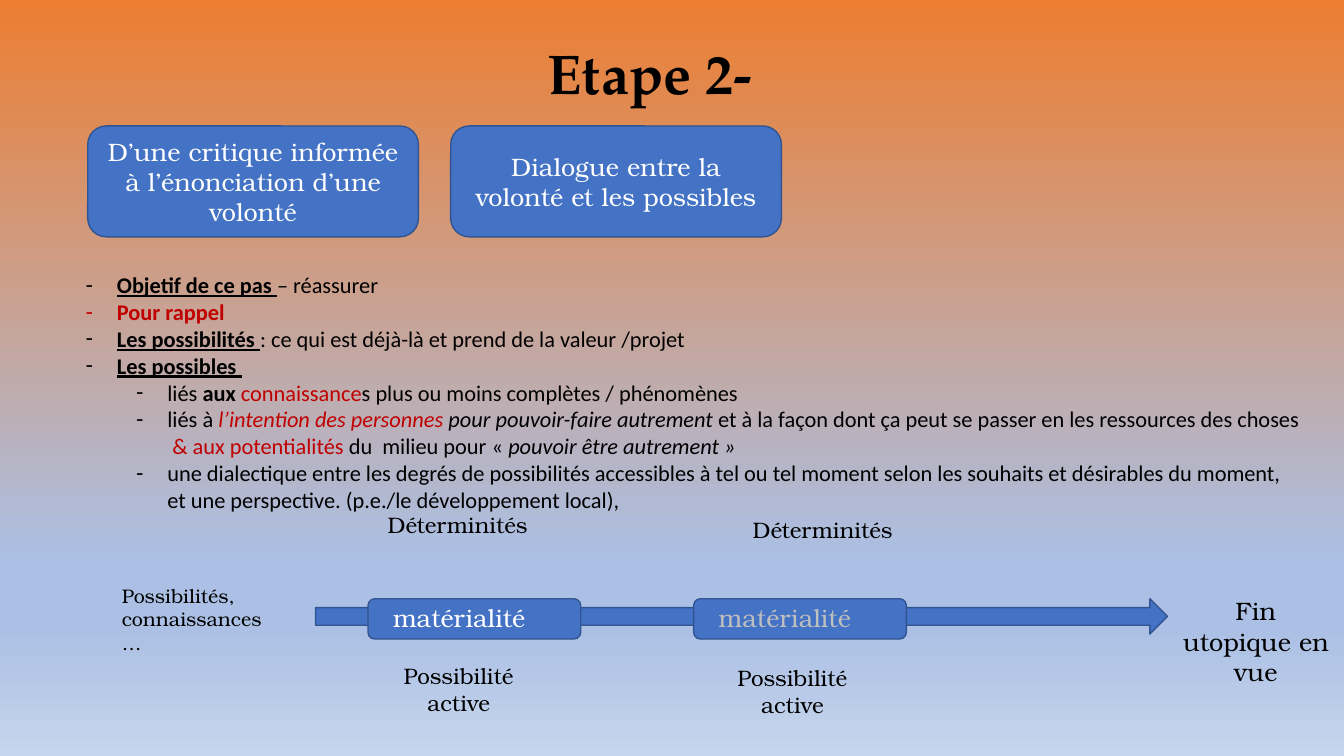
from pptx import Presentation
from pptx.dml.color import RGBColor
from pptx.enum.shapes import MSO_SHAPE as SHAPE
from pptx.enum.text import MSO_ANCHOR as ANCHOR, MSO_AUTO_SIZE as AUTO, PP_ALIGN as ALIGN
from pptx.oxml.ns import qn
from pptx.util import Inches, Pt
from lxml.etree import SubElement

rgb = RGBColor.from_string
BLACK, WHITE, GREY, RED, BLUE, EDGE = "000000", "FFFFFF", "BFBFBF", "C00000", "4472C4", "325491"
SERIF = "TeX Gyre Bonum"


def write(tf, text, size, color=BLACK, align=ALIGN.CENTER, font=SERIF, bold=False):
    tf.word_wrap = True
    p = tf.paragraphs[0]
    p.alignment = align
    r = p.add_run()
    r.text = text
    for name, value in dict(name=font, size=Pt(size), bold=bold).items():
        setattr(r.font, name, value)
    r.font.color.rgb = rgb(color)


def add_block(kind, *box):
    sp = s.shapes.add_shape(kind, *map(Inches, box))
    sp.shadow.inherit = False
    sp.fill.solid()
    sp.fill.fore_color.rgb = rgb(BLUE)
    sp.line.color.rgb = rgb(EDGE)
    sp.line.width = Pt(1)
    return sp


prs = Presentation()
prs.slide_width, prs.slide_height = Inches(13.33), Inches(7.5)
s = prs.slides.add_slide(prs.slide_layouts[1])

# Background: orange fading down to pale blue
fill = s.background.fill
fill.gradient()
fill.gradient_angle = 270
stops = s.element.find(".//" + qn("a:gsLst"))
for stop in list(stops):
    stops.remove(stop)
for pos, color in [(0, "ED7D31"), (3, "EA8038"), (74, "ABC0E4"), (83, "ABC0E4"), (100, "C7D5ED")]:
    stop = SubElement(stops, qn("a:gs"), pos=str(pos * 1000))
    SubElement(stop, qn("a:srgbClr"), val=color)

# Title and body placeholders
title, body = s.shapes.title, s.placeholders[1]
for sp, box in [(title, (0.32, 0.33, 12.25, 0.77)), (body, (0.75, 2.64, 12.25, 2.79))]:
    sp.left, sp.top, sp.width, sp.height = map(Inches, box)
    sp.text_frame.auto_size = AUTO.NONE
title.text_frame.vertical_anchor = ANCHOR.MIDDLE
write(title.text_frame, "Etape 2-", 40, font="TeX Gyre Pagella", bold=True)

# The two steps
for x, text in [(0.87, "D’une critique informée à l’énonciation d’une volonté"),
                (4.47, "Dialogue entre la volonté et les possibles")]:
    tf = add_block(SHAPE.ROUNDED_RECTANGLE, x, 1.25, 3.28, 1.1).text_frame
    tf.vertical_anchor = ANCHOR.MIDDLE
    write(tf, text, 18, WHITE)

# Dashed list: (level, runs), each run a text and its format
PLAIN, BOLD, ITALIC = {}, dict(bold=True), dict(italic=True)
HEAD = dict(bold=True, underline=True)
items = [
    (0, [("Objetif de ce pas ", HEAD), ("– réassurer", PLAIN)]),
    (0, [("Pour rappel", dict(bold=True, color=RED))]),
    (0, [("Les possibilités ", HEAD), (": ce qui est déjà-là et prend de la valeur /projet", PLAIN)]),
    (0, [("Les possibles ", HEAD)]),
    (1, [("liés", PLAIN), (" aux ", BOLD), ("connaissance", dict(color=RED)),
         ("s plus ou moins complètes / phénomènes", PLAIN)]),
    (1, [("liés à ", PLAIN), ("l’intention des personnes ", dict(italic=True, color=RED)),
         ("pour pouvoir-faire autrement", ITALIC),
         (" et à la façon dont ça peut se passer en les ressources des choses  ", PLAIN),
         ("& aux potentialités ", dict(color=RED)), ("du  milieu pour « ", PLAIN),
         ("pouvoir être autrement »", ITALIC)]),
    (1, [("une dialectique entre les degrés de possibilités accessibles à tel ou tel moment selon "
          "les souhaits et désirables du moment, et une perspective. (p.e./le développement local),",
          PLAIN)]),
]
tf = body.text_frame
tf.vertical_anchor = ANCHOR.TOP
for i, (level, runs) in enumerate(items):
    p = tf.add_paragraph() if i else tf.paragraphs[0]
    p.level = level
    p.space_before = Pt(0)
    pPr = p._p.get_or_add_pPr()
    pPr.set("marL", str(Inches(0.31 + 0.5 * level)))
    pPr.set("indent", str(-Inches(0.31)))
    SubElement(pPr, qn("a:buChar"), char="-")
    for text, style in runs:
        r = p.add_run()
        r.text = text
        look = dict(name="Calibri", size=Pt(16), color=BLACK) | style
        r.font.color.rgb = rgb(look.pop("color"))
        for name, value in look.items():
            setattr(r.font, name, value)

# Time arrow with its two material stages
add_block(SHAPE.RIGHT_ARROW, 3.13, 5.94, 8.45, 0.35)
for x in (3.65, 6.88):
    add_block(SHAPE.ROUNDED_RECTANGLE, x, 5.94, 2.11, 0.4)

labels = [
    ("Déterminités", (2.96, 5.02, 3.16, 0.37), 16, BLACK, ALIGN.CENTER),
    ("Déterminités", (6.58, 5.07, 3.16, 0.37), 16, BLACK, ALIGN.CENTER),
    ("matérialité", (3.8, 5.93, 1.87, 0.4), 18, WHITE, ALIGN.LEFT),
    ("matérialité", (7.03, 5.93, 1.87, 0.4), 18, GREY, ALIGN.LEFT),
    ("Possibilité active", (3.72, 6.52, 1.66, 0.64), 16, BLACK, ALIGN.CENTER),
    ("Possibilité active", (7.03, 6.54, 1.66, 0.64), 16, BLACK, ALIGN.CENTER),
    ("Possibilités, connaissances…", (1.11, 5.74, 1.67, 0.81), 14, BLACK, ALIGN.LEFT),
    ("Fin utopique en vue", (11.58, 5.86, 1.75, 0.71), 18, BLACK, ALIGN.CENTER),
]
for text, box, size, color, align in labels:
    sp = s.shapes.add_textbox(*map(Inches, box))
    write(sp.text_frame, text, size, color, align)

prs.save("out.pptx")
